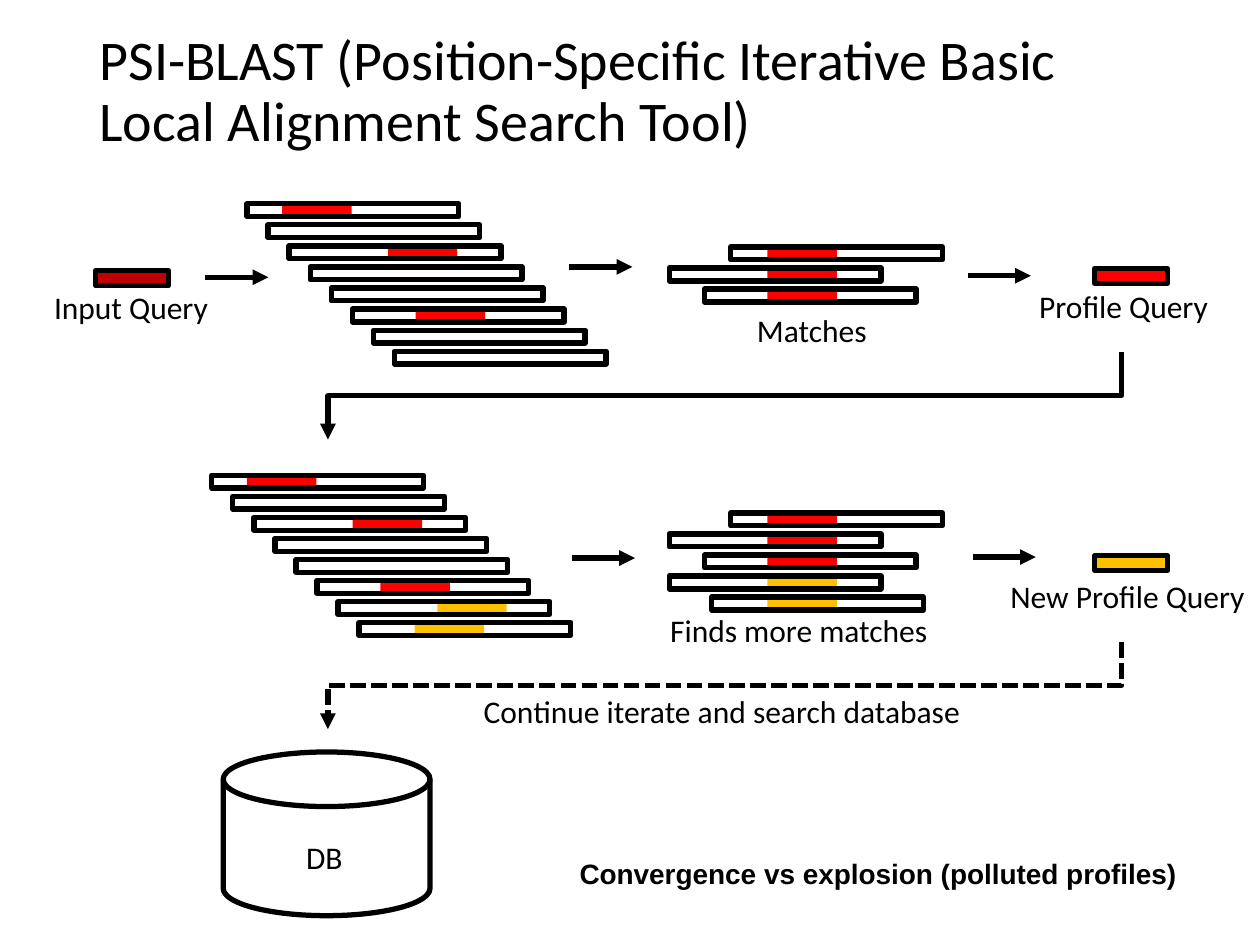
import pptx
import pptx.util
import pptx.dml.color
import pptx.enum.dml
import pptx.enum.shapes
import pptx.enum.text
import pptx.oxml
import pptx.oxml.ns

Cm, Pt = pptx.util.Cm, pptx.util.Pt
KIND = pptx.enum.shapes.MSO_SHAPE
LINK = pptx.enum.shapes.MSO_CONNECTOR
FIT = pptx.enum.text.MSO_AUTO_SIZE
ALIGN = pptx.enum.text.PP_ALIGN
qn = pptx.oxml.ns.qn

HUES = {"ink": "000000", "dark": "C00000", "red": "FF0000", "gold": "FFC000"}
RGB = {name: pptx.dml.color.RGBColor.from_string(code) for name, code in HUES.items()}
EDGE = Pt(3)

deck = pptx.Presentation()
deck.slide_width, deck.slide_height = Cm(25.4), Cm(19.05)
slide = deck.slides.add_slide(deck.slide_layouts[5])
shapes = slide.shapes


def block(box, hue=None, edge=True, kind=KIND.RECTANGLE):
    """Draw a shape at box (left, top, width, height in cm), filled or hollow."""
    shape = shapes.add_shape(kind, *map(Cm, box))
    shape.shadow.inherit = False
    if hue:
        shape.fill.solid()
        shape.fill.fore_color.rgb = RGB[hue]
    else:
        shape.fill.background()
    if edge:
        shape.line.color.rgb = RGB["ink"]
        shape.line.width = EDGE
    else:
        shape.line.fill.background()


def style(frame, text, form):
    """Write text into a frame and set its font from form."""
    frame.text = text
    font = frame.paragraphs[0].runs[0].font
    for key, value in form.items():
        setattr(font, key, value)
    font.color.rgb = RGB["ink"]


# Title
title = shapes.title
spot = {"left": Cm(1.75), "top": Cm(1.02), "width": Cm(21.9), "height": Cm(1.7)}
for key, value in spot.items():
    setattr(title, key, value)
style(title.text_frame,
      "PSI-BLAST (Position-Specific Iterative Basic Local Alignment Search Tool)",
      {"name": "Calibri", "size": Pt(32)})
setup = {"auto_size": FIT.NONE, "word_wrap": True,
         "vertical_anchor": pptx.enum.text.MSO_ANCHOR.MIDDLE}
for key, value in setup.items():
    setattr(title.text_frame, key, value)
head = title.text_frame.paragraphs[0]
head.alignment, head.line_spacing = ALIGN.LEFT, 0.9

# Stacks of sequences: top, left of each bar, {row: (left of hit, colour)}
STEP, LONG, HIT, THICK = 2.97 / 7, 4.27, 1.4, 0.26
stacks = []
hits = {0: (0.71, "red"), 2: (1.99, "red"), 5: (1.28, "red")}
more = hits | {6: (2.0, "gold"), 7: (1.12, "gold")}
for left, top, found in [(4.98, 4.11, hits), (4.27, 9.58, more)]:
    lefts = [left + STEP * row for row in range(8)]
    stacks.append((top, lefts, {row: (lefts[row] + gap, hue)
                                for row, (gap, hue) in found.items()}))
lefts = [14.73, 13.49, 14.2, 13.49, 14.35]
hues = ["red"] * 3 + ["gold"] * 2
for top, count in [(4.98, 3), (10.34, 5)]:
    stacks.append((top, lefts[:count],
                   {row: (15.47, hues[row]) for row in range(count)}))
for top, lefts, found in stacks:
    for row, left in enumerate(lefts):
        level = top + STEP * row
        if row in found:
            spot, hue = found[row]
            block((spot, level, HIT, THICK), hue, edge=False)
        block((left, level, LONG, THICK))

# Queries and database
for left, top, hue in [(1.93, 5.46, "dark"), (22.07, 5.41, "red"), (22.07, 11.2, "gold")]:
    block((left, top, 1.47, 0.3), hue)
block((4.5, 15.16, 4.17, 3.3), kind=KIND.FLOWCHART_MAGNETIC_DISK)

# Arrows; the elbows are turned a quarter so they leave downwards
links = []
for left, top in [(4.14, 5.59), (11.48, 5.38), (19.51, 5.56),
                  (11.53, 11.25), (19.61, 11.23)]:
    links.append(shapes.add_connector(LINK.STRAIGHT, Cm(left), Cm(top),
                                      Cm(left + 1.27), Cm(top)))
SPAN, DROP, MID = 16, 1.76, 14.61
for top in (7.1, 12.94):
    level = top + DROP / 2
    link = shapes.add_connector(LINK.ELBOW,
                                Cm(MID - DROP / 2), Cm(level - SPAN / 2),
                                Cm(MID + DROP / 2), Cm(level + SPAN / 2))
    link._element.spPr.find(qn("a:xfrm")).set("rot", "5400000")
    links.append(link)
for link in links:
    link.line.color.rgb = RGB["ink"]
    link.line.width = EDGE
links[-1].line.dash_style = pptx.enum.dml.MSO_LINE.SQUARE_DOT
for link in links:
    tip = pptx.oxml.parse_xml(
        '<a:tailEnd xmlns:a="http://schemas.openxmlformats.org/drawingml/2006/main"'
        ' type="triangle"/>')
    link.line._get_or_add_ln().append(tip)
    link._element.spPr.append(pptx.oxml.parse_xml(
        '<a:effectLst xmlns:a="http://schemas.openxmlformats.org/drawingml/2006/main"/>'))

# Labels
plain = {"name": "Calibri", "size": Pt(18)}
bold = {"name": "Arial", "size": Pt(16), "bold": True}
labels = [
    ("Input Query", 0.84, 5.69, 3.66, False, plain),
    ("Matches", 15.01, 6.15, 2.77, False, plain),
    ("Profile Query", 20.7, 5.66, 4.24, True, plain),
    ("Finds more matches", 13.26, 12.19, 5.79, False, plain),
    ("New Profile Query", 20.12, 11.51, 5.38, True, plain),
    ("Continue iterate and search database", 9.5, 13.82, 10.24, False, plain),
    ("DB", 5.92, 16.76, 1.24, False, plain),
    ("Convergence vs explosion (polluted profiles)", 11.23, 17.15, 12.95, False, bold),
]
for text, left, top, width, wrap, form in labels:
    label = shapes.add_textbox(Cm(left), Cm(top), Cm(width), Cm(1.02))
    frame = label.text_frame
    style(frame, text, form)
    frame.word_wrap, frame.auto_size = wrap, FIT.SHAPE_TO_FIT_TEXT
    if form is bold:
        frame.paragraphs[0].alignment = ALIGN.CENTER

deck.save("out.pptx")
